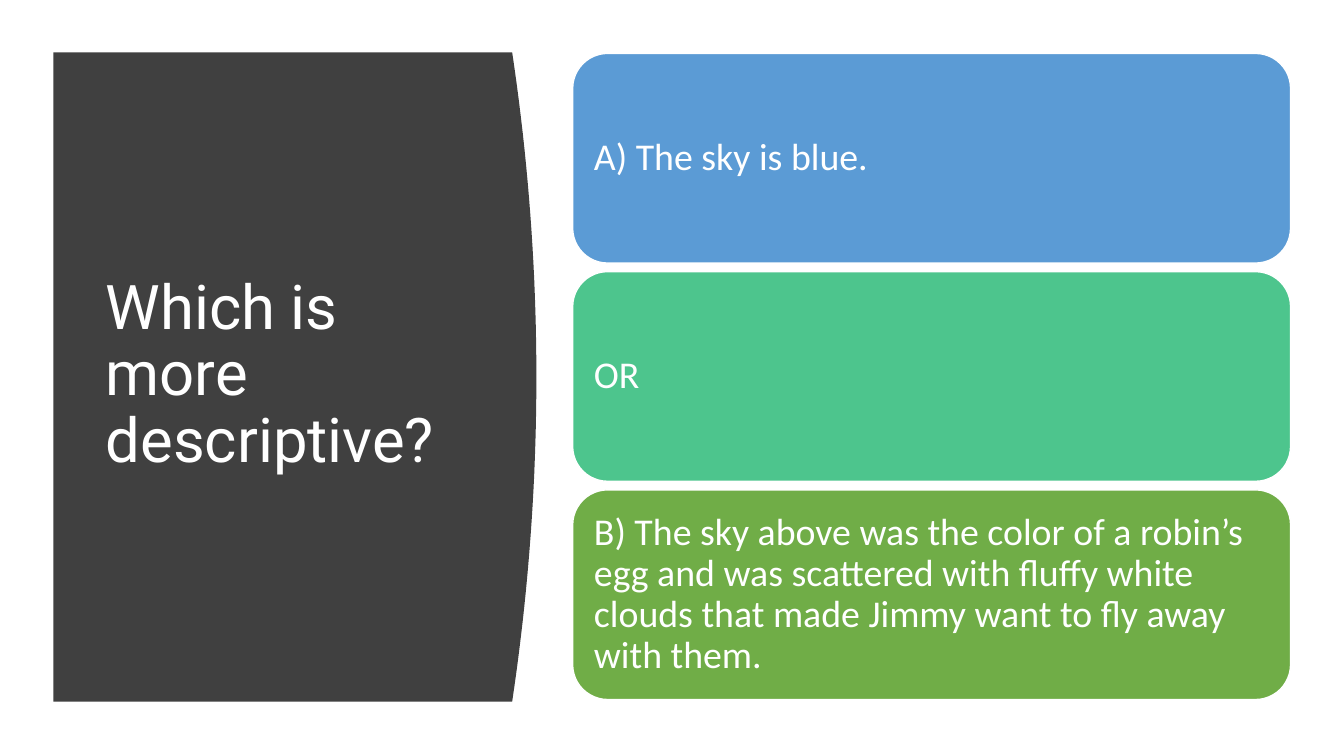
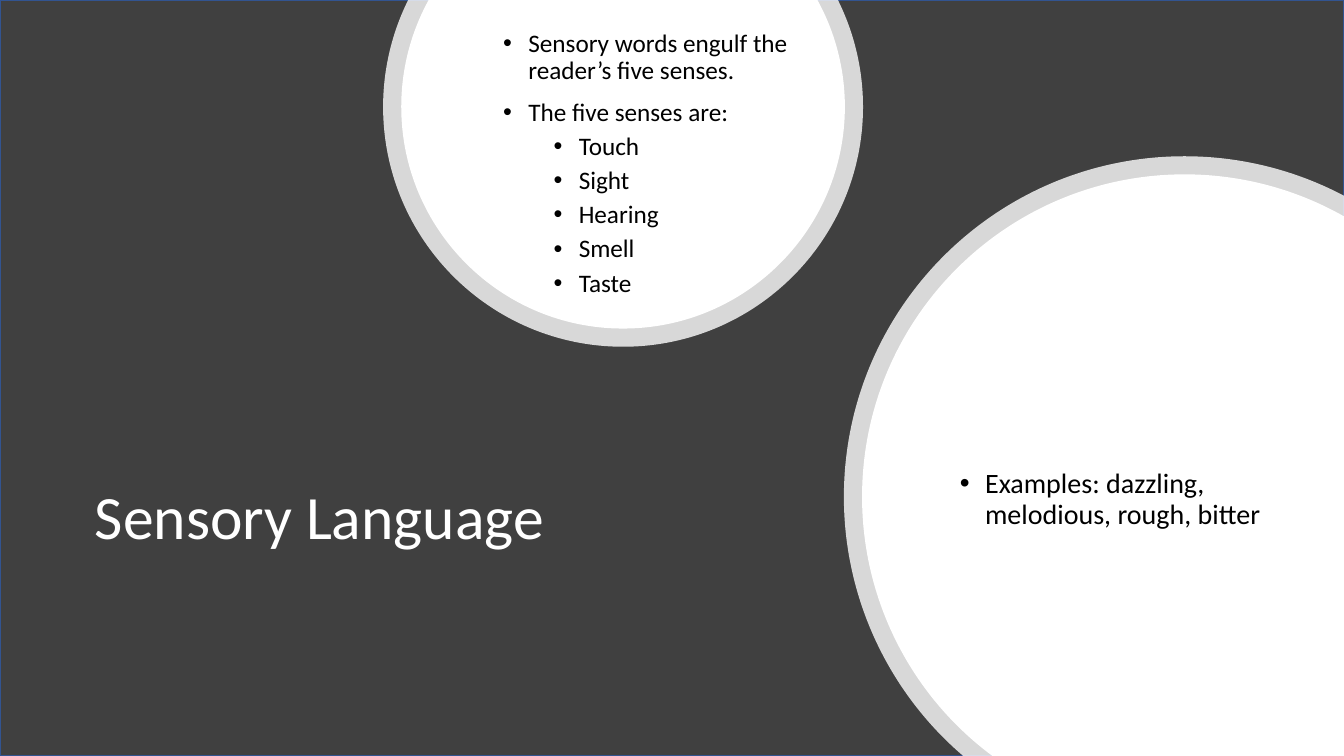
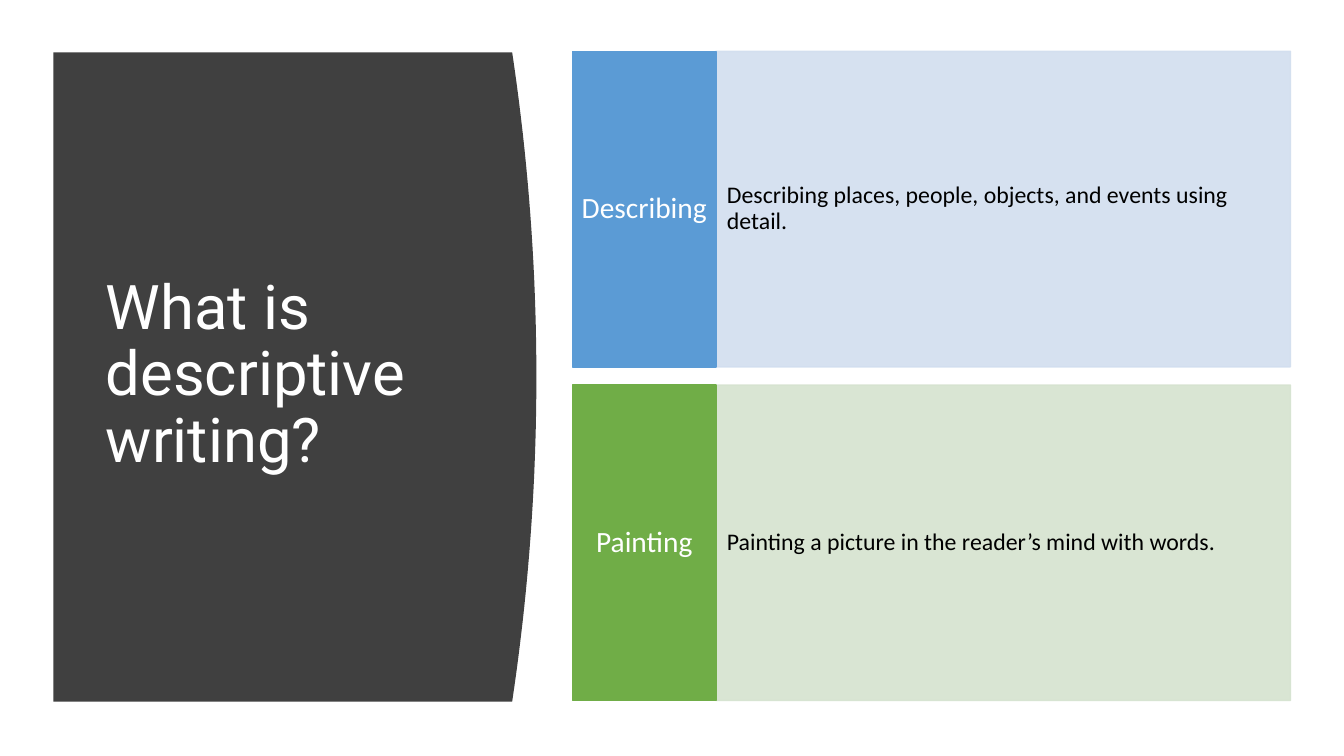
import itertools
import math

import pptx
import pptx.dml.color
import pptx.enum.shapes
import pptx.enum.text
import pptx.oxml.ns
import pptx.util
from lxml import etree

Inches = pptx.util.Inches
Pt = pptx.util.Pt
RGBColor = pptx.dml.color.RGBColor
Shape = pptx.enum.shapes.MSO_SHAPE
Align = pptx.enum.text.PP_ALIGN
qn = pptx.oxml.ns.qn

SLIDE_W, SLIDE_H = 13.33, 7.5
TITLE_ONLY, TWO_CONTENT = 5, 3

CHARCOAL = RGBColor(0x40, 0x40, 0x40)
NAVY = RGBColor(0x32, 0x54, 0x91)
WHITE = RGBColor(0xFF, 0xFF, 0xFF)
BLACK = RGBColor(0x00, 0x00, 0x00)
BLUE = RGBColor(0x5B, 0x9B, 0xD5)
TEAL = RGBColor(0x4D, 0xC5, 0x8D)
GREEN = RGBColor(0x70, 0xAD, 0x47)
PALE_BLUE = RGBColor(0xD2, 0xDE, 0xEF)
PALE_GREEN = RGBColor(0xD5, 0xE3, 0xCF)

BODY_FONT, PANEL_FONT = "Calibri", "Roboto"
TITLE_SIZE = 44
PANEL_LEFT, PANEL_TOP, PANEL_BOTTOM = 0.53, 0.52, 6.96
PANEL_CORNER, PANEL_BULGE = 5.08, 0.24
CONTENT_LEFT = 5.68
CIRCLE_BORDER = 0.18


def add_text(frame, text, *, size, color, font=BODY_FONT, align=Align.LEFT,
             level=0, space_before=0, indent=None):
    """Append a paragraph; a given indent (inches) makes it a bullet."""
    paragraph = frame.paragraphs[0]
    if paragraph.runs:
        paragraph = frame.add_paragraph()
    paragraph.level = level
    paragraph.alignment = align
    paragraph.line_spacing = 0.9
    paragraph.space_before = Pt(space_before)
    paragraph.space_after = Pt(0)
    run = paragraph.add_run()
    run.text = text
    run.font.size = Pt(size)
    run.font.name = font
    run.font.color.rgb = color
    if indent is not None:
        properties = paragraph._p.get_or_add_pPr()
        properties.set("marL", str(Inches(indent)))
        properties.set("indent", str(Inches(-0.25)))
        etree.SubElement(properties, qn("a:buFont")).set("typeface", "Arial")
        etree.SubElement(properties, qn("a:buChar")).set("char", "•")


def set_up_frame(shape, margins=(0.1, 0.05)):
    frame = shape.text_frame
    frame.word_wrap = True
    frame.auto_size = pptx.enum.text.MSO_AUTO_SIZE.NONE
    frame.vertical_anchor = pptx.enum.text.MSO_ANCHOR.MIDDLE
    frame.margin_left = frame.margin_right = Inches(margins[0])
    frame.margin_top = frame.margin_bottom = Inches(margins[1])
    return frame


def place(placeholder, left, top, width, height):
    """Move a placeholder in front of the shapes and return its text frame."""
    placeholder.left, placeholder.top = Inches(left), Inches(top)
    placeholder.width, placeholder.height = Inches(width), Inches(height)
    placeholder.element.getparent().append(placeholder.element)
    return set_up_frame(placeholder)


def paint(shape, fill, line=None, opacity=100):
    shape.shadow.inherit = False
    shape.fill.solid()
    shape.fill.fore_color.rgb = fill
    if line is None:
        shape.line.fill.background()
    else:
        shape.line.color.rgb = line
        shape.line.width = Pt(1)
    if opacity < 100:
        for color in shape.element.spPr.iter(qn("a:srgbClr")):
            etree.SubElement(color, qn("a:alpha")).set("val", str(opacity * 1000))


def add_box(slide, kind, left, top, width, height, fill, line, opacity=100):
    box = slide.shapes.add_shape(
        kind, Inches(left), Inches(top), Inches(width), Inches(height))
    paint(box, fill, line, opacity)
    return box


def add_outline(slide, points, fill, opacity=100):
    """Draw a closed polygon through points given in inches."""
    corners = [(Inches(x), Inches(y)) for x, y in points]
    builder = slide.shapes.build_freeform(*corners[0])
    builder.add_line_segments(corners[1:], close=True)
    outline = builder.convert_to_shape()
    paint(outline, fill, opacity=opacity)
    return outline


def add_cut_circle(slide, center, radius, angles, corners, opacity):
    """Draw a white arc through the angles (degrees), closed by the corners."""
    def on_circle(angle, reach=0):
        """Point at the angle, moved along the tangent by reach radii."""
        cosine, sine = math.cos(angle), math.sin(angle)
        return (center[0] + radius * (cosine - reach * sine),
                center[1] + radius * (sine + reach * cosine))

    turns = [math.radians(angle) for angle in angles]
    outline = add_outline(slide, [on_circle(turn) for turn in turns] + corners,
                          WHITE, opacity)
    sides = list(outline.element.iter(qn("a:lnTo")))
    for side, (start, end) in zip(sides, itertools.pairwise(turns)):
        reach = 4 / 3 * math.tan((end - start) / 4)
        curve = etree.Element(qn("a:cubicBezTo"))
        for x, y in (on_circle(start, reach), on_circle(end, -reach),
                     on_circle(end)):
            point = etree.SubElement(curve, qn("a:pt"))
            point.set("x", str(Inches(x) - outline.left))
            point.set("y", str(Inches(y) - outline.top))
        side.getparent().replace(side, curve)


def add_top_circle(slide, radius, opacity=100):
    """Circle cut off by the top edge."""
    center = (6.18, 1.06)
    cut = math.degrees(math.asin(center[1] / radius))
    add_cut_circle(slide, center, radius, [-cut, 0, 90, 180, 180 + cut], [],
                   opacity)


def add_corner_circle(slide, radius, opacity=100):
    """Circle cut off by the bottom and right edges."""
    center = (11.75, 4.93)
    bottom_cut = math.degrees(math.asin((SLIDE_H - center[1]) / radius))
    right_cut = math.degrees(math.acos((SLIDE_W - center[0]) / radius))
    add_cut_circle(slide, center, radius,
                   [180 - bottom_cut, 180, 270, 360 - right_cut],
                   [(SLIDE_W, SLIDE_H)], opacity)


def add_panel_slide(deck, title):
    """Add a slide with its title on the dark panel with a bulging edge."""
    slide = deck.slides.add_slide(deck.slide_layouts[TITLE_ONLY])
    steps = 40
    points = [(PANEL_LEFT, PANEL_BOTTOM), (PANEL_LEFT, PANEL_TOP)]
    for step in range(steps + 1):
        share = step / steps
        x = PANEL_CORNER + PANEL_BULGE * (1 - (2 * share - 1) ** 2)
        points.append((x, PANEL_TOP + share * (PANEL_BOTTOM - PANEL_TOP)))
    add_outline(slide, points, CHARCOAL)
    frame = place(slide.shapes.title, 0.95, 1.11, 3.74, 5.24)
    add_text(frame, title, size=TITLE_SIZE, color=WHITE, font=PANEL_FONT)
    return slide


def build_comparison(deck):
    slide = add_panel_slide(deck, "Which is more descriptive?")
    top, height, pitch = 0.53, 2.08, 2.165
    choices = [
        ("A) The sky is blue.", BLUE),
        ("OR", TEAL),
        ("B) The sky above was the color of a robin’s egg and was scattered "
         "with fluffy white clouds that made Jimmy want to fly away with them.",
         GREEN),
    ]
    for row, (choice, color) in enumerate(choices):
        card = add_box(slide, Shape.ROUNDED_RECTANGLE, CONTENT_LEFT,
                       top + row * pitch, 7.12, height, color, WHITE)
        add_text(set_up_frame(card, (0.11, 0.11)), choice, size=27, color=WHITE)


def build_sensory_language(deck):
    slide = deck.slides.add_slide(deck.slide_layouts[TWO_CONTENT])
    title, senses, examples = slide.placeholders
    add_box(slide, Shape.RECTANGLE, 0, 0, SLIDE_W, SLIDE_H, CHARCOAL, NAVY)
    for add_circle, radius in ((add_top_circle, 2.2), (add_corner_circle, 3.2)):
        add_circle(slide, radius + CIRCLE_BORDER, opacity=80)
        add_circle(slide, radius)

    add_text(place(title, 0.84, 3.83, 6.62, 2.65), "Sensory Language",
             size=TITLE_SIZE, color=WHITE)

    frame = place(senses, 4.89, 0.65, 3.15, 1.96)
    for statement in ("Sensory words engulf the reader’s five senses.",
                      "The five senses are:"):
        add_text(frame, statement, size=18, color=BLACK, space_before=10,
                 indent=0.25)
    for sense in ("Touch", "Sight", "Hearing", "Smell", "Taste"):
        add_text(frame, sense, size=18, color=BLACK, level=1, space_before=5,
                 indent=0.75)

    add_text(place(examples, 9.17, 3.44, 3.8, 3.04),
             "Examples: dazzling, melodious, rough, bitter",
             size=20, color=BLACK, indent=0.5)


def build_definition(deck):
    slide = add_panel_slide(deck, "What is descriptive writing?")
    first_top, height, gap, label_width = 0.51, 3.13, 0.18, 1.42
    definitions = [
        ("Describing", BLUE, PALE_BLUE,
         "Describing places, people, objects, and events using detail."),
        ("Painting", GREEN, PALE_GREEN,
         "Painting a picture in the reader’s mind with words."),
    ]
    for row, (verb, color, tint, meaning) in enumerate(definitions):
        top = first_top + row * (height + gap)
        detail = add_box(slide, Shape.RECTANGLE, CONTENT_LEFT + label_width, top,
                         5.7, height, tint, tint, opacity=90)
        add_text(set_up_frame(detail, (0.11, 0.79)), meaning, size=17, color=BLACK)
        label = add_box(slide, Shape.RECTANGLE, CONTENT_LEFT, top, label_width,
                        height, color, color)
        add_text(set_up_frame(label, (0.08, 0.31)), verb, size=21, color=WHITE,
                 align=Align.CENTER)


def main():
    deck = pptx.Presentation()
    deck.slide_width, deck.slide_height = Inches(SLIDE_W), Inches(SLIDE_H)
    build_comparison(deck)
    build_sensory_language(deck)
    build_definition(deck)
    deck.save("out.pptx")


if __name__ == "__main__":
    main()
